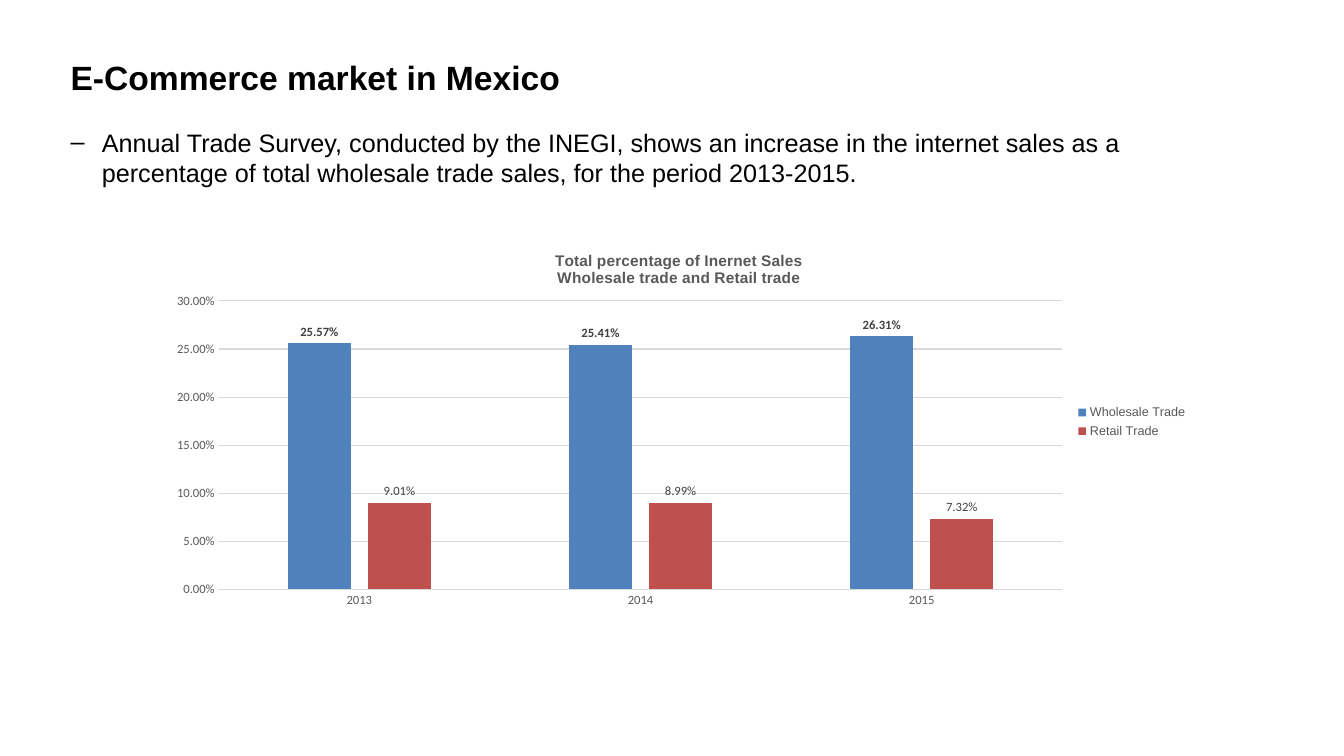
from dataclasses import dataclass

from lxml.etree import SubElement
from pptx import Presentation
from pptx.chart.data import CategoryChartData
from pptx.dml.color import RGBColor
from pptx.enum.chart import XL_CHART_TYPE as ChartType
from pptx.enum.chart import XL_LABEL_POSITION as LabelPos
from pptx.enum.chart import XL_LEGEND_POSITION as LegendPos
from pptx.enum.chart import XL_TICK_MARK as Tick
from pptx.enum.text import MSO_ANCHOR as Anchor
from pptx.enum.text import MSO_AUTO_SIZE as AutoSize
from pptx.enum.text import PP_ALIGN as Align
from pptx.oxml.ns import qn
from pptx.util import Inches, Pt

BLACK = RGBColor(0x00, 0x00, 0x00)
GRAY = RGBColor(0x59, 0x59, 0x59)
DARK = RGBColor(0x40, 0x40, 0x40)
RULE = RGBColor(0xD9, 0xD9, 0xD9)
BLUE = RGBColor(0x4F, 0x81, 0xBD)
RED = RGBColor(0xC0, 0x50, 0x4D)
WIDTH, HEIGHT = 13.33, 7.5


@dataclass(frozen=True)
class Box:
    """An area in inches on the slide."""
    left: float
    top: float
    width: float
    height: float

    def emu(self) -> tuple:
        return tuple(Inches(v) for v in (self.left, self.top, self.width, self.height))


@dataclass(frozen=True)
class TradeSeries:
    name: str
    values: tuple
    color: RGBColor
    bold_labels: bool


TITLE = Box(0.6, 0.46, 11.67, 0.6)
BODY = Box(0.6, 1.21, 11.67, 0.7)
CHART = Box(1.55, 2.25, 10.33, 3.87)
YEARS = ("2013", "2014", "2015")
SERIES = (
    TradeSeries("Wholesale Trade", (0.2557, 0.2541, 0.2631), BLUE, True),
    TradeSeries("Retail Trade", (0.0901, 0.0899, 0.0732), RED, False),
)
CHART_TITLE = ("Total percentage of Inernet Sales", "Wholesale trade and Retail trade")


def style(font, name: str, size: float, color: RGBColor, bold: bool = False) -> None:
    font.name, font.size, font.bold = name, Pt(size), bold
    font.color.rgb = color


def fill_placeholder(sp, box: Box, text: str, size: float, bold: bool, anchor):
    sp.left, sp.top, sp.width, sp.height = box.emu()
    tf = sp.text_frame
    tf.word_wrap, tf.auto_size, tf.vertical_anchor = True, AutoSize.NONE, anchor
    p = tf.paragraphs[0]
    p.alignment, p.space_before = Align.LEFT, Pt(0)
    r = p.add_run()
    r.text = text
    style(r.font, "Arial", size, BLACK, bold)
    return p


def add_dash(p, indent: float) -> None:
    pPr = p._p.get_or_add_pPr()
    pPr.set("marL", str(Inches(indent)))
    pPr.set("indent", str(-Inches(indent)))
    SubElement(pPr, qn("a:buFont")).set("typeface", "Arial")
    SubElement(pPr, qn("a:buChar")).set("char", "‒")


def set_layout(part, index: int, inner: bool = False, **shares: float) -> None:
    """Place a chart part by shares of the chart area."""
    for old in part.findall(qn("c:layout")):
        part.remove(old)
    layout = SubElement(part, qn("c:layout"))
    part.insert(index, layout)
    manual = SubElement(layout, qn("c:manualLayout"))
    if inner:
        SubElement(manual, qn("c:layoutTarget")).set("val", "inner")
    for mode in ("xMode", "yMode"):
        SubElement(manual, qn(f"c:{mode}")).set("val", "edge")
    for key, share in shares.items():
        SubElement(manual, qn(f"c:{key}")).set("val", str(share))


def add_chart_title(chart) -> None:
    chart.has_title = True
    title = chart.chart_title
    tf = title.text_frame
    for i, line in enumerate(CHART_TITLE):
        p = tf.add_paragraph() if i else tf.paragraphs[0]
        r = p.add_run()
        r.text = line
        style(r.font, "Arial", 11, GRAY, True)
    set_layout(title._element, 1, x=0.38, y=0.05)


def format_axes(chart) -> None:
    cat, val = chart.category_axis, chart.value_axis
    for axis in (cat, val):
        axis.major_tick_mark = axis.minor_tick_mark = Tick.NONE
        style(axis.tick_labels.font, "Calibri", 9, GRAY)
    cat.has_major_gridlines = False
    val.has_major_gridlines = True
    for line in (cat.format.line, val.major_gridlines.format.line):
        line.color.rgb = RULE
        line.width = Pt(0.75)
    val.format.line.fill.background()
    val.minimum_scale, val.maximum_scale, val.major_unit = 0, 0.3, 0.05
    val.tick_labels.number_format = "0.00%"
    val.tick_labels.number_format_is_linked = False


def format_series(plot) -> None:
    for s, trade in zip(plot.series, SERIES):
        s.invert_if_negative = False
        s.format.fill.solid()
        s.format.fill.fore_color.rgb = trade.color
        labels = s.data_labels
        labels.show_value = True
        labels.position = LabelPos.OUTSIDE_END
        labels.number_format = "0.00%"
        labels.number_format_is_linked = False
        style(labels.font, "Calibri", 9, DARK, trade.bold_labels)


def add_sales_chart(slide) -> None:
    data = CategoryChartData(number_format="0.00%")
    data.categories = YEARS
    for trade in SERIES:
        data.add_series(trade.name, trade.values)
    chart = slide.shapes.add_chart(ChartType.COLUMN_CLUSTERED, *CHART.emu(), data).chart
    style(chart.font, "Calibri", 10, BLACK)
    add_chart_title(chart)
    format_axes(chart)

    plot = chart.plots[0]
    plot.gap_width, plot.overlap, plot.vary_by_categories = 219, -27, False
    format_series(plot)

    chart.has_legend = True
    chart.legend.position = LegendPos.RIGHT
    chart.legend.include_in_layout = False
    style(chart.legend.font, "Arial", 9, GRAY)

    # Fixed plot area inside the chart
    plot_area = chart.element.find(f".//{qn('c:plotArea')}")
    set_layout(plot_area, 0, inner=True, x=0.06, y=0.19, w=0.81, h=0.74)


def main() -> None:
    prs = Presentation()
    prs.slide_width, prs.slide_height = Inches(WIDTH), Inches(HEIGHT)
    slide = prs.slides.add_slide(prs.slide_layouts[1])

    # Heading and survey finding
    fill_placeholder(slide.shapes.title, TITLE, "E-Commerce market in Mexico",
                     24, True, Anchor.MIDDLE)
    finding = fill_placeholder(
        slide.placeholders[1], BODY,
        "Annual Trade Survey, conducted by the INEGI, shows an increase in the internet "
        "sales as a percentage of total wholesale trade sales, for the period 2013-2015.",
        18, False, Anchor.TOP)
    add_dash(finding, 0.31)

    # Internet sales by year
    add_sales_chart(slide)
    prs.save("out.pptx")


if __name__ == "__main__":
    main()
